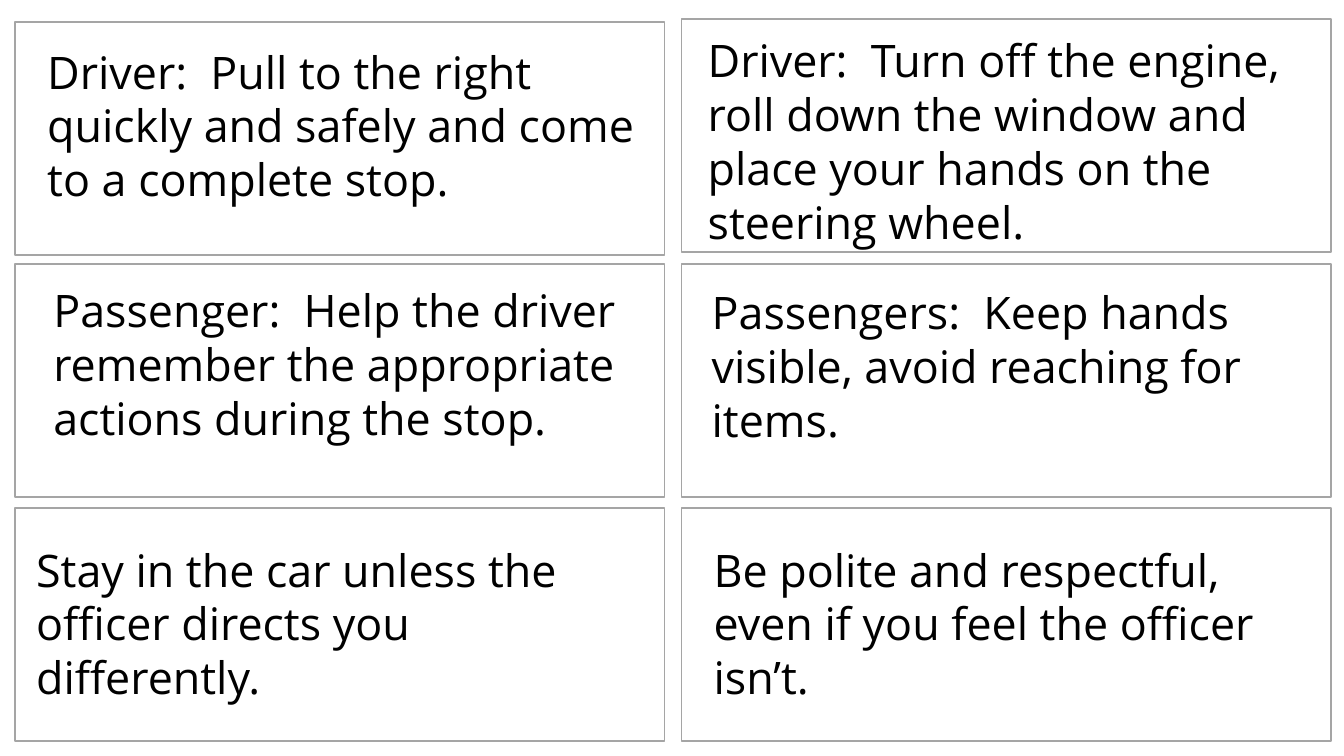
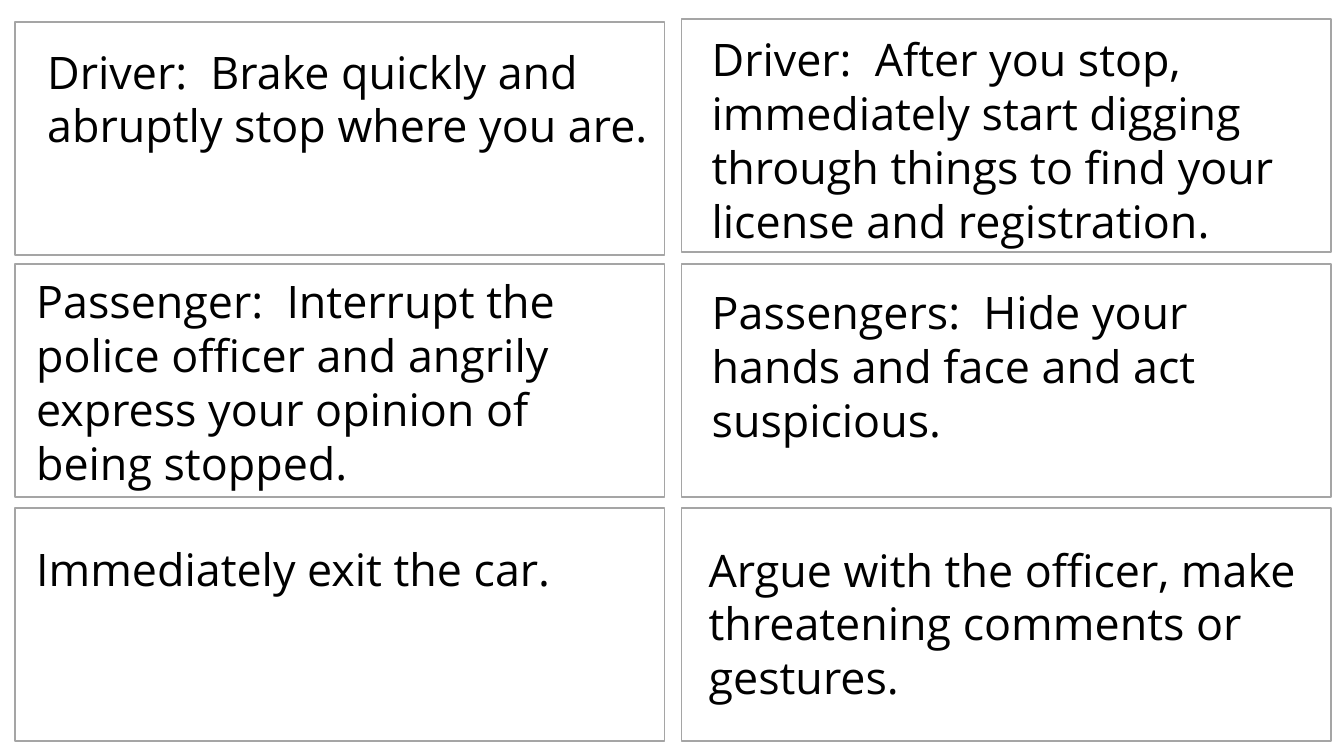
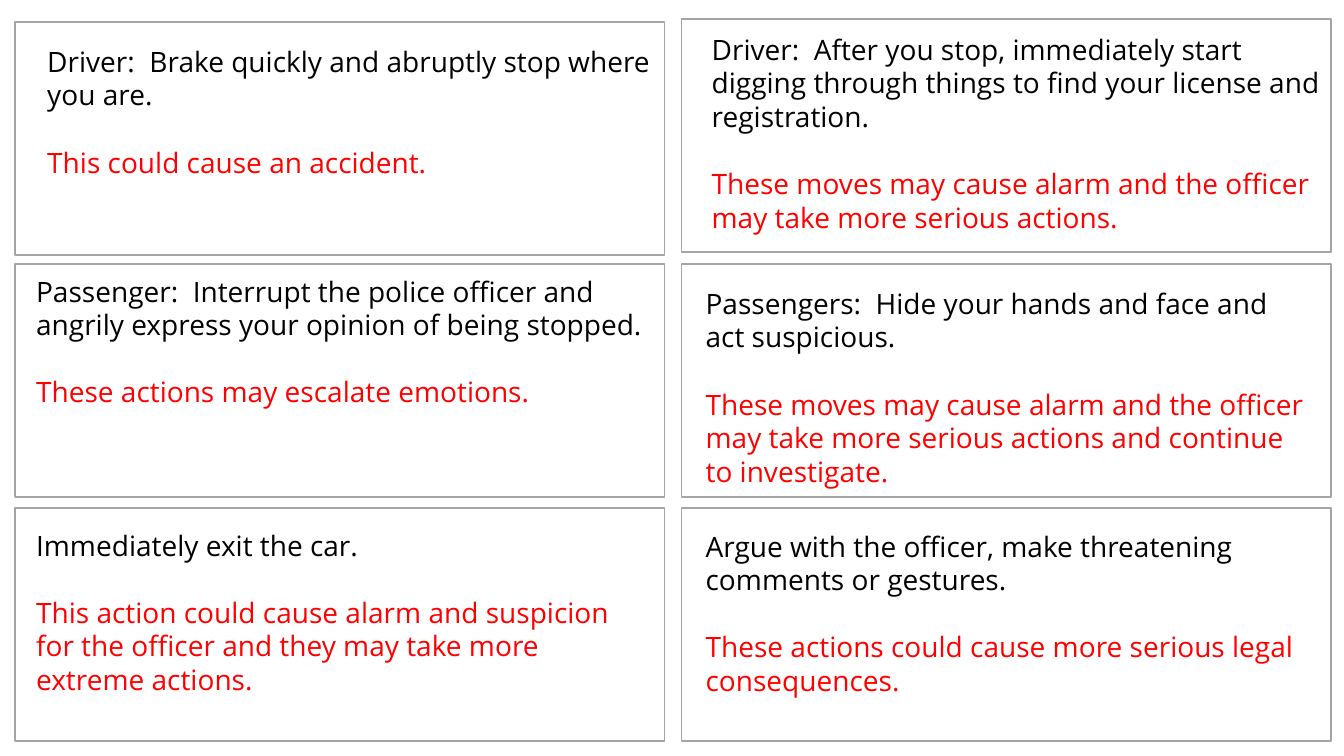
from pptx import Presentation
from pptx.dml.color import RGBColor
from pptx.enum.shapes import MSO_SHAPE as Shape
from pptx.enum.text import MSO_AUTO_SIZE as Fit
from pptx.util import Pt

PX = 9144  # EMU per px, 100 px to the inch
WIDE, HIGH = 1333, 750

# Card grid: the first row sits slightly uneven
CARD_W, CARD_H = 644, 231
LEFT, RIGHT = 15, 676
CARDS = [(LEFT, 22), (RIGHT, 19),
         (LEFT, 262), (RIGHT, 262),
         (LEFT, 504), (RIGHT, 504)]

NOTE_W, WIDE_W = 622, 641


def color(code):
    return RGBColor.from_string(code)


class Deck:
    font = "Open Sans"
    ink, alert = "000000", "FF0000"
    paper, edge = "FFFFFF", "A5A5A5"

    def __init__(self):
        self.deck = Presentation()
        self.deck.slide_width = WIDE * PX
        self.deck.slide_height = HIGH * PX
        self.slide = None

    def page(self):
        self.slide = self.deck.slides.add_slide(self.deck.slide_layouts[6])
        for x, y in CARDS:
            self.card(x, y)

    def card(self, x, y):
        box = self.slide.shapes.add_shape(
            Shape.RECTANGLE, x * PX, y * PX, CARD_W * PX, CARD_H * PX)
        box.shadow.inherit = False
        box.fill.solid()
        box.fill.fore_color.rgb = color(self.paper)
        box.line.color.rgb = color(self.edge)
        box.line.width = Pt(1)

    def label(self, par, text, size=32, tint=ink, before=0):
        par.space_before = Pt(before)
        run = par.add_run()
        run.text = text
        run.font.name = self.font
        run.font.size = Pt(size)
        run.font.color.rgb = color(tint)

    def note(self, x, y, w, h, text, risk=None):
        box = self.slide.shapes.add_textbox(x * PX, y * PX, w * PX, h * PX)
        frame = box.text_frame
        frame.word_wrap = True
        frame.auto_size = Fit.SHAPE_TO_FIT_TEXT
        size = 20 if risk else 32
        self.label(frame.paragraphs[0], text, size=size)
        if risk:
            # One line of space sets the risk apart
            self.label(frame.add_paragraph(), risk, size=size,
                       tint=self.alert, before=24)


# Wrong moves, used with and without their risks
BRAKE = "Driver:  Brake quickly and abruptly stop where you are."
DIG = ("Driver:  After you stop, immediately start digging through things "
       "to find your license and registration.")
BUTT_IN = ("Passenger:  Interrupt the police officer and angrily express "
           "your opinion of being stopped.")
HIDE = "Passengers:  Hide your hands and face and act suspicious."
EXIT = "Immediately exit the car."
ARGUE = "Argue with the officer, make threatening comments or gestures."
ALARM = ("These moves may cause alarm and the officer may take more "
         "serious actions")

# Each note: left, top, width, height, text and, if any, risk
PAGES = [
    # What to do
    [(37, 39, NOTE_W, 172, "Driver:  Pull to the right quickly and safely "
      "and come to a complete stop."),
     (692, 28, WIDE_W, 226, "Driver:  Turn off the engine, roll down the "
      "window and place your hands on the steering wheel."),
     (43, 276, NOTE_W, 172, "Passenger:  Help the driver remember the "
      "appropriate actions during the stop."),
     (696, 278, NOTE_W, 172, "Passengers:  Keep hands visible, avoid "
      "reaching for items."),
     (26, 533, NOTE_W, 172, "Stay in the car unless the officer directs "
      "you differently."),
     (698, 533, NOTE_W, 172, "Be polite and respectful, even if you feel "
      "the officer isn’t.")],
    # What not to do
    [(37, 39, NOTE_W, 172, BRAKE),
     (696, 27, WIDE_W, 226, DIG),
     (26, 267, NOTE_W, 226, BUTT_IN),
     (696, 278, NOTE_W, 172, HIDE),
     (26, 533, NOTE_W, 64, EXIT),
     (693, 533, NOTE_W, 172, ARGUE)],
    # What not to do, and why
    [(37, 39, NOTE_W, 145, BRAKE, "This could cause an accident."),
     (696, 27, WIDE_W, 212, DIG, ALARM + "."),
     (26, 267, NOTE_W, 178, BUTT_IN, "These actions may escalate emotions."),
     (690, 279, NOTE_W, 212, HIDE, ALARM + " and continue to investigate."),
     (26, 519, NOTE_W, 178, EXIT, "This action could cause alarm and "
      "suspicion for the officer and they may take more extreme actions."),
     (690, 520, NOTE_W, 178, ARGUE, "These actions could cause more "
      "serious legal consequences.")],
]


def main():
    show = Deck()
    for notes in PAGES:
        show.page()
        for note in notes:
            show.note(*note)
    show.deck.save("out.pptx")


if __name__ == "__main__":
    main()
